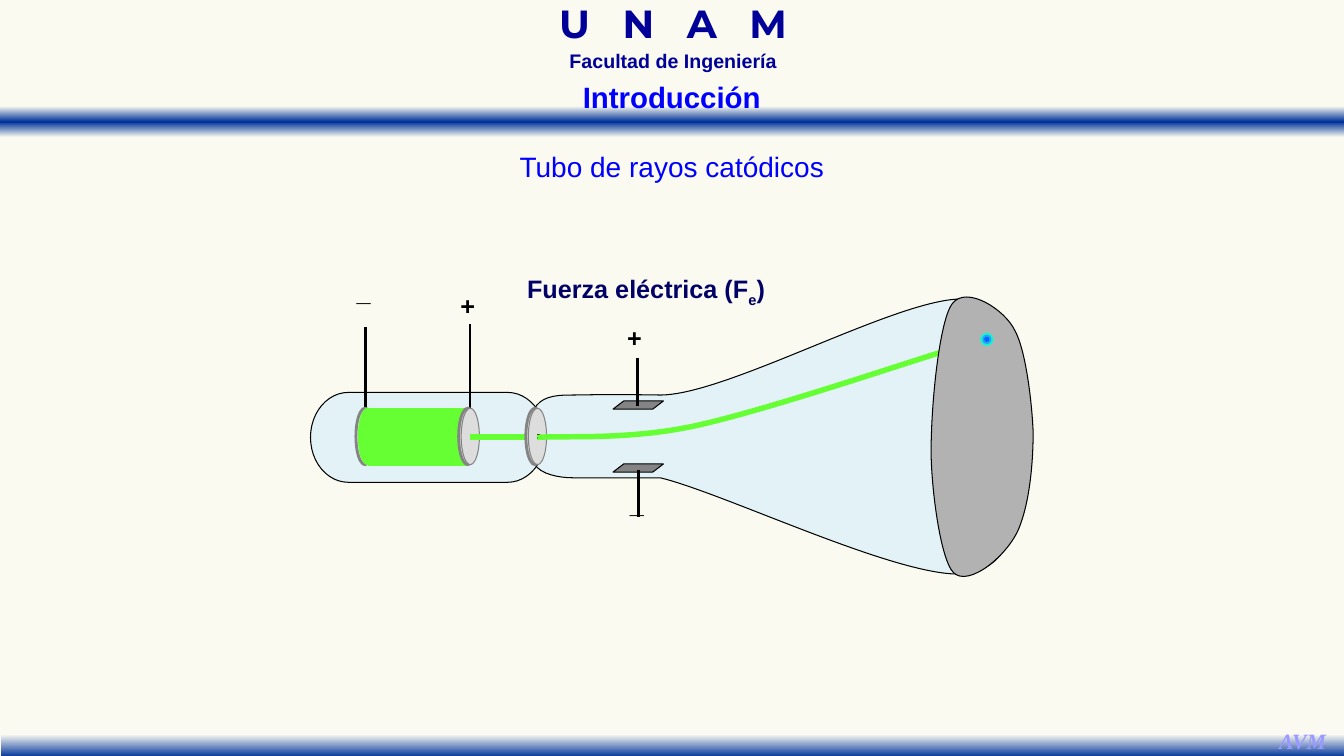
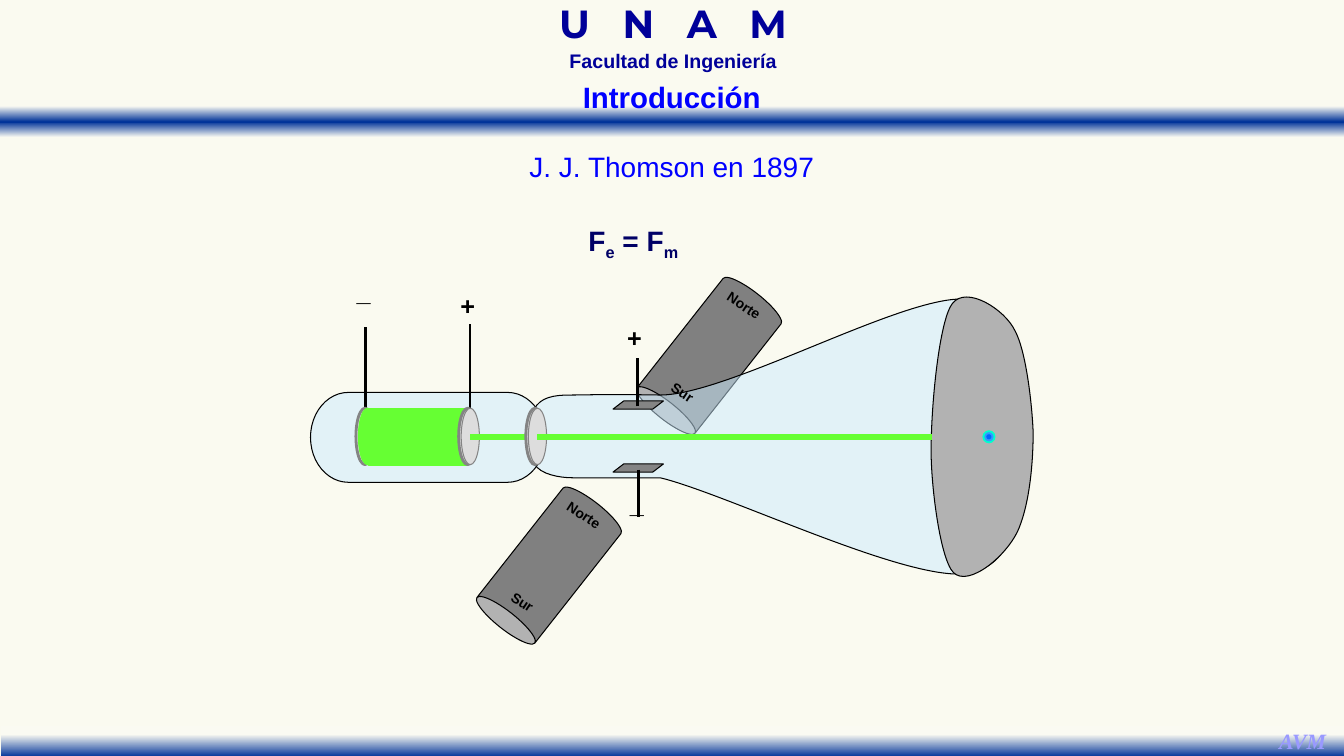
from dataclasses import dataclass
from typing import NamedTuple

from lxml.etree import SubElement as Sub
from pptx import Presentation as Deck
from pptx.dml.color import RGBColor as Rgb
from pptx.enum.shapes import MSO_CONNECTOR as Link, MSO_SHAPE as Kind
from pptx.enum.text import MSO_AUTO_SIZE as Fit, PP_ALIGN as Align
from pptx.oxml.ns import qn
from pptx.util import Pt


class Face(NamedTuple):
    """Type style of a text."""
    size: float
    tint: str
    name: str = "Arial"
    bold: bool = True
    slant: bool = False
    space: float = 0
    lead: float = 1
    mid: bool = False
    wrap: bool = False


@dataclass(frozen=True)
class Theme:
    """Colours and type styles of the deck."""
    paper: str = "FAFAF0"
    fade: str = "FAFAF2"
    band: str = "003399"
    ink: str = "000000"
    glass: str = "CCECFF"
    ray: str = "66FF33"
    rim: str = "848484"
    disc: str = "DDDDDD"
    hole: str = "00B0F0"
    screen: str = "B2B2B2"
    magnet: str = "808080"
    glow: tuple = (("00FFCC", 8.6), ("3399FF", 5.8), ("0066FF", 2.9))
    school: Face = Face(28, "000099", "Montserrat", space=7.7, lead=0.7,
                        mid=True, wrap=True)
    unit: Face = Face(14, "000099", lead=0.7, mid=True, wrap=True)
    mark: Face = Face(15.6, "9999FF", "Times New Roman", slant=True, mid=True)
    head: Face = Face(21, "0000FF", mid=True)
    topic: Face = Face(20, "0000FF", bold=False, mid=True, wrap=True)
    force: Face = Face(18, "000066")
    equal: Face = Face(20, "000066")
    sign: Face = Face(18, "000000")
    pole: Face = Face(10, "000000")


THEME = Theme()
AXIS = 312
GLASS = [
    (381.6, 292.3), (385.9, 283.7), (396, 282.2), (406.8, 282.2),
    (418.3, 282.2), (429.8, 281.5), (471.6, 282.2),
    (520.6, 282.2), (647.3, 209.5), (690.5, 213.8),
    (733.7, 217.4), (731.5, 273.6), (731.5, 306),
    (731.5, 339.1), (733.7, 403.9), (690.5, 409.7),
    (647.3, 415.4), (519.1, 352.8), (471.6, 341.3),
    (430.6, 341.3), (416.9, 341.3), (409, 341.3),
    (400.3, 341.3), (385.9, 339.1), (381.6, 331.2),
]
SCREEN = [
    (665.3, 313.2), (666, 280.1), (671.8, 227.5), (680.4, 216.7),
    (690.5, 203.8), (717.8, 221), (725, 236.2),
    (733, 250.6), (737.3, 289.4), (738, 308.9),
    (738, 329), (735.8, 357.8), (727.9, 377.3),
    (720, 396.7), (691.9, 419.8), (681.1, 409),
    (671, 398.9), (663.8, 339.1), (665.3, 313.2),
]
BENT = [
    (383.8, 312.5), (401.8, 311), (446.4, 314.6), (494.6, 304.6),
    (542.2, 294.5), (634.3, 263.5), (671, 252),
]
MAGNETS = [(480.2, 198), (365.8, 347.8)]


def paint(shape, fill, line, width=0.75, alpha=None):
    """Set fill, outline and transparency of a shape."""
    shape.shadow.inherit = False
    if fill:
        shape.fill.solid()
        shape.fill.fore_color.rgb = Rgb.from_string(fill)
    else:
        shape.fill.background()
    if line:
        shape.line.color.rgb = Rgb.from_string(line)
        shape.line.width = Pt(width)
    else:
        shape.line.fill.background()
    if alpha:
        tint = shape.element.spPr.find(qn("a:solidFill")).find(qn("a:srgbClr"))
        Sub(tint, qn("a:alpha")).set("val", str(alpha * 1000))


def form(slide, kind, box, fill, line, width=0.75, alpha=None, bend=None, turn=0):
    """Add a preset shape."""
    shape = slide.shapes.add_shape(kind, *map(Pt, box))
    paint(shape, fill, line, width, alpha)
    if bend is not None:
        shape.adjustments[0] = bend
    shape.rotation = turn
    return shape


def band(slide, box, stops):
    """Add a bar with a vertical gradient."""
    shape = form(slide, Kind.RECTANGLE, box, None, None)
    shape.fill.gradient()
    shape.fill.gradient_angle = 270
    ramp = shape.element.spPr.find(qn("a:gradFill")).find(qn("a:gsLst"))
    for old in list(ramp):
        ramp.remove(old)
    for place, tint in stops:
        stop = Sub(ramp, qn("a:gs"))
        stop.set("pos", str(place * 1000))
        Sub(stop, qn("a:srgbClr")).set("val", tint)


def label(slide, box, text, face, turn=0):
    """Add a text in which every second part between bars is lowered."""
    shape = slide.shapes.add_textbox(*map(Pt, box))
    shape.rotation = turn
    frame = shape.text_frame
    frame.word_wrap = face.wrap
    frame.auto_size = Fit.SHAPE_TO_FIT_TEXT
    para = frame.paragraphs[0]
    para.alignment = Align.CENTER if face.mid else Align.LEFT
    para.line_spacing = face.lead
    for rank, part in enumerate(text.split("|")):
        run = para.add_run()
        run.text = part
        font = run.font
        font.size, font.name = Pt(face.size), face.name
        font.bold, font.italic = face.bold, face.slant
        font.color.rgb = Rgb.from_string(face.tint)
        props = font._element
        if face.space:
            props.set("spc", str(round(face.space * 100)))
        if rank % 2:
            props.set("baseline", "-25000")


def wire(slide, start, end, tint, width):
    """Add a straight line."""
    line = slide.shapes.add_connector(Link.STRAIGHT, *map(Pt, start + end))
    line.line.color.rgb = Rgb.from_string(tint)
    line.line.width = Pt(width)
    Sub(line.element.spPr, qn("a:effectLst"))
    return line


def curve(slide, knots, fill, line, width=0.75, alpha=None, close=True):
    """Add an outline of cubic curves, three knots to each after the first."""
    spots = [tuple(map(Pt, knot)) for knot in knots]
    pen = slide.shapes.build_freeform(*spots[0], scale=1.0)
    pen.add_line_segments(spots[1:], close=close)
    shape = pen.convert_to_shape()
    legs = list(shape.element.spPr.iter(qn("a:lnTo")))
    for first in range(0, len(legs), 3):
        trio = legs[first:first + 3]
        arc = trio[0].makeelement(qn("a:cubicBezTo"))
        trio[0].addprevious(arc)
        for leg in trio:
            arc.append(leg[0])
            leg.getparent().remove(leg)
    paint(shape, fill, line, width, alpha)


def oval(slide, left, fill, line, width=0.75):
    """Add an upright ellipse of the electron gun."""
    form(slide, Kind.OVAL, (left, 291.6, 13, 40.3), fill, line, width)


def disc(slide, left):
    """Add a thick disc and return the hole at its centre."""
    oval(slide, left, THEME.disc, THEME.rim, 2)
    oval(slide, left + 1.8, THEME.disc, THEME.rim)
    return form(slide, Kind.RECTANGLE, (left + 8.2, AXIS - 1.5, 1.5, 3),
                THEME.hole, THEME.ink, 0.5)


def ray(slide, start, hole):
    """Add a straight beam that ends at a hole."""
    beam = wire(slide, (start, AXIS), (start - 50, AXIS), THEME.ray, 4)
    beam.end_connect(hole, 1)


def gun(slide):
    """Draw the glass, the electron gun and its plates; return the last hole."""
    curve(slide, GLASS, THEME.glass, THEME.ink, alpha=50)
    form(slide, Kind.FLOWCHART_TERMINATOR, (221.8, 280.3, 167.8, 64.2),
         THEME.glass, THEME.ink, alpha=50)
    for x, top in ((260.8, 233.3), (335.7, 231.1)):
        wire(slide, (x, 292.3), (x, top), THEME.ink, 2)
    oval(slide, 254.2, THEME.disc, THEME.rim, 2)
    oval(slide, 256, THEME.ray, THEME.ray)
    form(slide, Kind.RECTANGLE, (263.2, 292, 70.6, 40.3), THEME.ray, THEME.ray)
    ray(slide, 387.4, disc(slide, 327.6))
    hole = disc(slide, 375.6)
    for top, x, start, end in ((286.4, 455.3, 290.2, 255.6),
                               (331.4, 456, 335.5, 369.4)):
        form(slide, Kind.PARALLELOGRAM, (437.9, top, 36, 5.8),
             THEME.rim, THEME.ink, bend=1.312)
        wire(slide, (x, start), (x, end), THEME.ink, 2)
    for x, y, sign in ((321.8, 203.8, "+"), (247.7, 193.7, "_"),
                       (440.8, 226.8, "+"), (442.8, 345.1, "_")):
        label(slide, (x, y, 24.8, 28.8), sign, THEME.sign)
    return hole


def target(slide, x, y):
    """Draw the screen and the glowing spot centred at x, y."""
    curve(slide, SCREEN, THEME.screen, THEME.ink)
    for tint, size in THEME.glow:
        form(slide, Kind.OVAL, (x - size / 2, y - size / 2, size, size), tint, tint)


def magnet(slide, x, y):
    """Draw a tilted bar magnet."""
    form(slide, Kind.CAN, (x, y, 52.6, 112.3), THEME.magnet, THEME.ink,
         bend=0.244, turn=218.2)


def poles(slide, x, y):
    """Name the poles of the magnet placed at x, y."""
    label(slide, (x + 31.2, y + 10.5, 40.3, 19.4), "Norte", THEME.pole, 33.2)
    label(slide, (x - 8, y + 72.5, 31, 19.4), "Sur", THEME.pole, 33.2)


def page(deck, topic):
    """Add a slide with the shared bands, header, footer and its topic."""
    slide = deck.slides.add_slide(deck.slide_layouts[6])
    band(slide, (-0.7, 75.8, 961.2, 22.3),
         ((0, THEME.fade), (50, THEME.band), (100, THEME.fade)))
    band(slide, (0.7, 518.4, 961.2, 22.3), ((28, THEME.fade), (100, THEME.band)))
    for box, text, face in (
            ((340, 5, 281.5, 32.4), "U N A M", THEME.school),
            ((352.4, 36, 257, 19.4), "Facultad de Ingeniería", THEME.unit),
            ((906, 516.2, 49, 26.6), "AVM", THEME.mark),
            ((408.2, 53.3, 143.3, 32.4), "Introducción", THEME.head),
            ((359.3, 103, 241.2, 31.7), topic, THEME.topic)):
        label(slide, box, text, face)
    return slide


def bent(deck):
    """Build the slide with the deflected beam."""
    slide = page(deck, "Tubo de rayos catódicos")
    gun(slide)
    curve(slide, BENT, None, THEME.ray, 3.9, close=False)
    target(slide, 704.9, 242.4)
    label(slide, (369.4, 192, 186.5, 28.8), "Fuerza eléctrica (F|e|)", THEME.force)


def level(deck):
    """Build the slide with the balanced beam."""
    slide = page(deck, "J. J. Thomson en 1897")
    for spot in MAGNETS:
        magnet(slide, *spot)
    hole = gun(slide)
    target(slide, 706.4, AXIS)
    ray(slide, 666, hole)
    for spot in MAGNETS:
        poles(slide, *spot)
    label(slide, (413.3, 156.2, 81.4, 31.7), "F|e| = F|m", THEME.equal)


def main():
    """Build and save the deck."""
    deck = Deck()
    deck.slide_width, deck.slide_height = Pt(960), Pt(540)
    fill = deck.slide_master.background.fill
    fill.solid()
    fill.fore_color.rgb = Rgb.from_string(THEME.paper)
    bent(deck)
    level(deck)
    deck.save("out.pptx")


if __name__ == "__main__":
    main()
